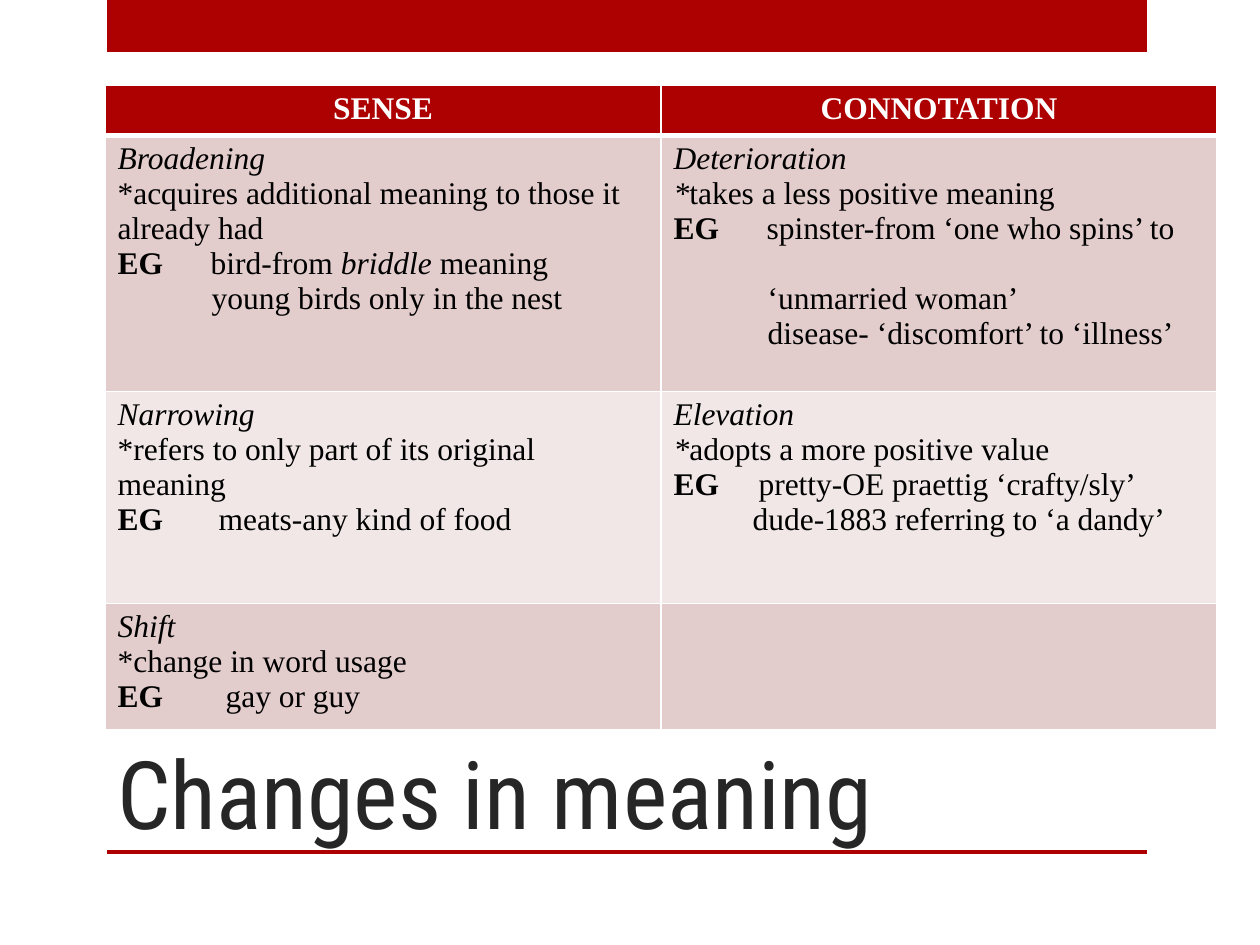
from lxml import etree
from pptx import Presentation
from pptx.dml.color import RGBColor
from pptx.enum.shapes import MSO_SHAPE
from pptx.enum.text import MSO_ANCHOR, PP_ALIGN
from pptx.oxml.ns import qn
from pptx.util import Pt

RECTANGLE = MSO_SHAPE.RECTANGLE
BOTTOM = MSO_ANCHOR.BOTTOM
CENTER = PP_ALIGN.CENTER
PX = 914400 // 126  # EMU per px
RED, WHITE, BLACK = "AD0101", "FFFFFF", "000000"
BAND_COLORS = ["E3CCCC", "F1E7E7", "E3CCCC"]


def paint(color_format, color):
    color_format.rgb = RGBColor.from_string(color)


def add_run(paragraph, text, size, font_name, color, style=""):
    run = paragraph.add_run()
    run.text = text
    run.font.size = Pt(size)
    run.font.name = font_name
    run.font.bold = style == "bold"
    run.font.italic = style == "italic"
    paint(run.font.color, color)


presentation = Presentation()
presentation.slide_width = 1260 * PX
presentation.slide_height = 945 * PX
slide = presentation.slides.add_slide(presentation.slide_layouts[6])

# Red bars at the top and under the title
for top, height in [(0, 52), (850, 4)]:
    bar = slide.shapes.add_shape(RECTANGLE, 107 * PX, top * PX, 1040 * PX, height * PX)
    bar.shadow.inherit = False
    bar.fill.solid()
    paint(bar.fill.fore_color, RED)
    bar.line.fill.background()

# Title
title = slide.shapes.add_textbox(105 * PX, 630 * PX, 935 * PX, 220 * PX)
title.text_frame.word_wrap = True
title.text_frame.vertical_anchor = BOTTOM
title.text_frame.margin_bottom = 2 * PX
add_run(title.text_frame.paragraphs[0], "Changes in meaning", 54, "Roboto Condensed", "262626")

# Table content: each line is (indent in px, space before in points, runs);
# an indented line that starts with EG hangs its label to the left
headers = ["SENSE", "CONNOTATION"]
body = [
    [
        [
            (0, 0, [("Broadening", "italic")]),
            (0, 0, [("*acquires additional meaning to those it already had", "")]),
            (93, 0, [("EG\t", "bold"), ("bird-from ", ""), ("briddle", "italic"), (" meaning", "")]),
            (94, 0, [("young birds only in the nest", "")]),
        ],
        [
            (0, 0, [("Deterioration", "italic")]),
            (0, 0, [("*", "italic"), ("takes a less positive meaning", "")]),
            (93, 0, [("EG\t", "bold"), ("spinster-from ‘one who spins’ to", "")]),
            (94, 20, [("‘unmarried woman’", "")]),
            (94, 0, [("disease- ‘discomfort’ to ‘illness’", "")]),
        ],
    ],
    [
        [
            (0, 0, [("Narrowing", "italic")]),
            (0, 0, [("*refers to only part of its original meaning", "")]),
            (101, 0, [("EG\t", "bold"), ("meats-any kind of food", "")]),
        ],
        [
            (0, 0, [("Elevation", "italic")]),
            (0, 0, [("*", "italic"), ("adopts a more positive value", "")]),
            (85, 0, [("EG\t", "bold"), ("pretty-OE praettig ‘crafty/sly’", "")]),
            (79, 0, [("dude-1883 referring to ‘a dandy’", "")]),
        ],
    ],
    [
        [
            (0, 0, [("Shift", "italic")]),
            (0, 0, [("*change in word usage", "")]),
            (108, 0, [("EG\t", "bold"), ("gay or guy", "")]),
        ],
        [],
    ],
]
rows = [[[(0, 0, [(header, "bold")])] for header in headers]] + body
row_heights = [48, 256, 212, 117]

# Table
frame = slide.shapes.add_table(4, 2, 105 * PX, 85 * PX, 1112 * PX, sum(row_heights) * PX)
table = frame.table
for column in table.columns:
    column.width = 556 * PX
for row_index, (cells, height) in enumerate(zip(rows, row_heights)):
    table.rows[row_index].height = height * PX
    is_header = row_index == 0
    for column_index, lines in enumerate(cells):
        cell = table.cell(row_index, column_index)

        # White borders, heavier between the header and the body
        properties = cell._tc.get_or_add_tcPr()
        for side in ["lnL", "lnR", "lnT", "lnB"]:
            heavy = (row_index, side) in [(0, "lnB"), (1, "lnT")]
            border = etree.SubElement(properties, qn(f"a:{side}"), w=str(Pt(3 if heavy else 1)))
            border_fill = etree.SubElement(border, qn("a:solidFill"))
            etree.SubElement(border_fill, qn("a:srgbClr"), val=WHITE)
        cell.fill.solid()
        paint(cell.fill.fore_color, RED if is_header else BAND_COLORS[row_index - 1])

        # Text
        for line_index, (indent, space_before, runs) in enumerate(lines):
            text_frame = cell.text_frame
            paragraph = text_frame.add_paragraph() if line_index else text_frame.paragraphs[0]
            if is_header:
                paragraph.alignment = CENTER
            paragraph.space_before = Pt(space_before)
            if indent:
                paragraph_properties = paragraph._p.get_or_add_pPr()
                hanging = indent if runs[0][0].startswith("EG") else 0
                paragraph_properties.set("marL", str(indent * PX))
                paragraph_properties.set("indent", str(-hanging * PX))
            for text, style in runs:
                add_run(paragraph, text, 18, "Times New Roman", WHITE if is_header else BLACK, style)

presentation.save("out.pptx")
